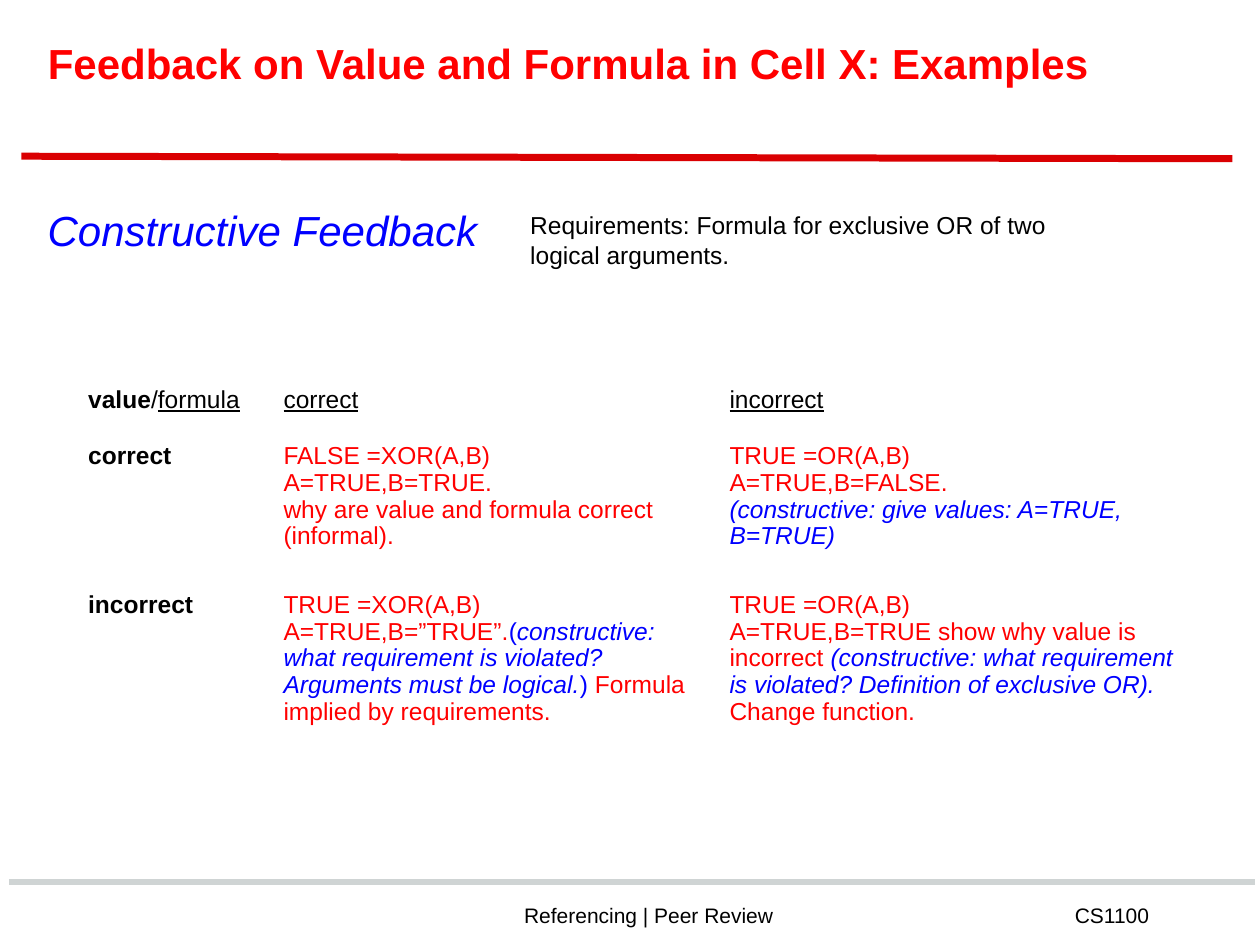
from pptx import Presentation
from pptx import util as u
from pptx.dml.color import RGBColor
from pptx.enum import shapes, text
from pptx.oxml.ns import qn
from lxml import etree

COLORS = {"black": "000000", "red": "FF0000", "blue": "0000FF",
          "rule": "DA0002", "footer": "CFD4D4"}
STYLES = {
    "plain": ("black", ""), "bold": ("black", "b"), "underlined": ("black", "u"),
    "red": ("red", ""), "title": ("red", "b"),
    "blue": ("blue", ""), "hint": ("blue", "i"),
}

TITLE = [[("Feedback on Value and Formula in Cell X: Examples", "title")]]
BOXES = [
    ((0.28, 1.52, 3.8, 0.63), 24, "l", [[("Constructive Feedback", "hint")]]),
    ((4.11, 1.57, 4.79, 0.56), 14, "l",
     [[("Requirements: Formula for exclusive OR of two logical arguments.", "plain")]]),
    ((2, 7.06, 6.3, 0.44), 12, "c", [[("Referencing | Peer Review", "plain")]]),
    ((8.15, 7.06, 1.35, 0.44), 12, "c", [[("CS1100", "plain")]]),
]
LINES = [((0.07, 7), (9.96, 7), "footer"), ((0.17, 1.24), (9.78, 1.26), "rule")]

COLUMNS = [1.55, 3.54, 3.81]
ROWS = [0.45, 1.18, 1.42]
CELLS = [
    [
        [[("value", "bold"), ("/", "plain"), ("formula", "underlined")]],
        [[("correct", "underlined")]],
        [[("incorrect", "underlined")]],
    ],
    [
        [[("correct", "bold")]],
        [[("FALSE =XOR(A,B)", "red")],
         [("A=TRUE,B=TRUE.", "red")],
         [("why are value and formula correct (informal).", "red")]],
        [[("TRUE =OR(A,B)", "red")],
         [("A=TRUE,B=FALSE.", "red")],
         [("(constructive: give values: A=TRUE, B=TRUE)", "hint")]],
    ],
    [
        [[("incorrect", "bold")]],
        [[("TRUE =XOR(A,B)", "red")],
         [("A=TRUE,B=”TRUE”.", "red"), ("(", "blue"),
          ("constructive: what requirement is violated? Arguments must be logical.", "hint"),
          (") ", "blue"), ("Formula implied by requirements.", "red")]],
        [[("TRUE =OR(A,B)", "red")],
         [("A=TRUE,B=TRUE show why value is incorrect ", "red"),
          ("(constructive: what requirement is violated? Definition of exclusive OR). ", "hint"),
          ("Change function.", "red")]],
    ],
]
ALIGNMENTS = {"l": text.PP_ALIGN.LEFT, "c": text.PP_ALIGN.CENTER}


def color(name):
    return RGBColor.from_string(COLORS[name])


def write(frame, paragraphs, size, align="l", spacing=1.0):
    frame.word_wrap = True
    frame.auto_size = text.MSO_AUTO_SIZE.NONE
    fill_text(frame, paragraphs, size, align, spacing)
    frame.vertical_anchor = text.MSO_ANCHOR.TOP
    frame.margin_left = frame.margin_right = u.Inches(0.1)
    frame.margin_top = frame.margin_bottom = u.Inches(0.1)


def fill_text(frame, paragraphs, size, align="l", spacing=1.0):
    for index, runs in enumerate(paragraphs):
        paragraph = frame.paragraphs[0] if index == 0 else frame.add_paragraph()
        paragraph.alignment = ALIGNMENTS[align]
        paragraph.line_spacing = spacing
        paragraph.space_before = u.Pt(0)
        for words, style in runs:
            run = paragraph.add_run()
            run.text = words
            name, marks = STYLES[style]
            font = run.font
            font.name, font.size = "Arial", u.Pt(size)
            font.color.rgb = color(name)
            font.bold, font.italic, font.underline = (mark in marks for mark in "biu")


def add_line(slide, start, end, name):
    ends = [u.Inches(value) for value in (*start, *end)]
    line = slide.shapes.add_connector(shapes.MSO_CONNECTOR.STRAIGHT, *ends)
    line.line.color.rgb = color(name)
    line.line.width = u.Pt(4)
    etree.SubElement(line._element.spPr, qn("a:effectLst"))


def add_feedback_table(slide):
    frame = slide.shapes.add_table(
        len(ROWS), len(COLUMNS), u.Inches(0.6), u.Inches(2.97),
        u.Inches(sum(COLUMNS)), u.Inches(sum(ROWS)))
    table = frame.table
    table.first_row = table.horz_banding = False
    for column, width in zip(table.columns, COLUMNS):
        column.width = u.Inches(width)
    for row, height, contents in zip(table.rows, ROWS, CELLS):
        row.height = u.Inches(height)
        for cell, paragraphs in zip(row.cells, contents):
            cell.fill.background()
            cell.margin_left = cell.margin_right = u.Inches(0.1)
            cell.margin_top = cell.margin_bottom = u.Inches(0.1)
            fill_text(cell.text_frame, paragraphs, 14, spacing=0.97)


def main():
    presentation = Presentation()
    presentation.slide_width, presentation.slide_height = u.Inches(10), u.Inches(7.5)
    slide = presentation.slides.add_slide(presentation.slide_layouts[5])
    for line in LINES:
        add_line(slide, *line)
    title = slide.shapes.title
    title.left, title.top = u.Inches(0.28), u.Inches(0.2)
    title.width, title.height = u.Inches(9.32), u.Inches(0.63)
    write(title.text_frame, TITLE, 24)
    for place, size, align, paragraphs in BOXES:
        box = slide.shapes.add_textbox(*map(u.Inches, place))
        write(box.text_frame, paragraphs, size, align)
    add_feedback_table(slide)
    presentation.save("out.pptx")


if __name__ == "__main__":
    main()
